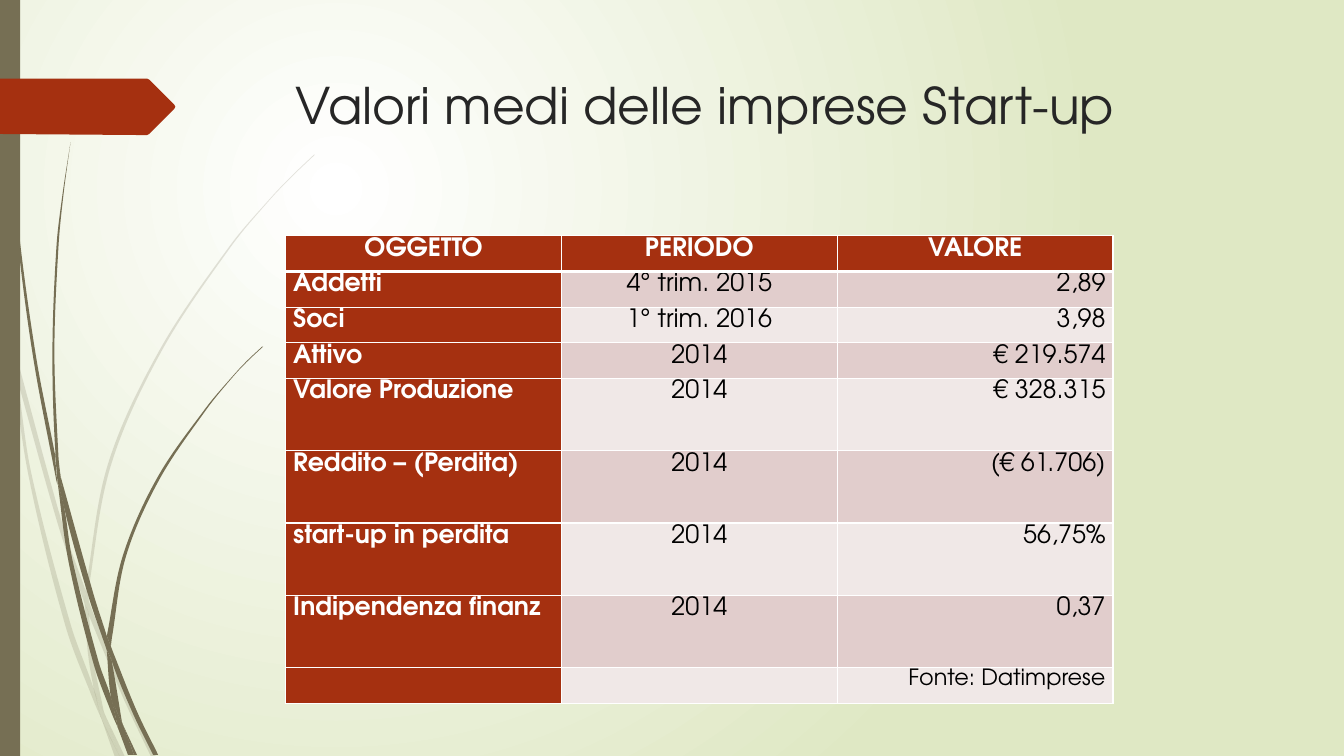
from math import dist

from lxml.etree import SubElement
from pptx import Presentation
from pptx.dml.color import RGBColor
from pptx.enum.shapes import MSO_SHAPE as Shape
from pptx.enum.text import MSO_ANCHOR as Anchor, MSO_AUTO_SIZE as AutoSize, PP_ALIGN as Align
from pptx.oxml.ns import qn
from pptx.util import Cm, Pt

FONT = "TeX Gyre Adventor"
WHITE = RGBColor(0xFF, 0xFF, 0xFF)
BLACK = RGBColor(0, 0, 0)
CHARCOAL = RGBColor(0x26, 0x26, 0x26)
RUST = RGBColor(0xA5, 0x30, 0x10)
OLIVE = RGBColor(0x76, 0x6F, 0x54)
PALE_GREEN = RGBColor(0xDF, 0xE8, 0xC4)
BANDS = (RGBColor(0xF0, 0xE8, 0xE7), RGBColor(0xE1, 0xCD, 0xCC))

TITLE = "Valori medi delle imprese Start-up"
LOW, TALL = 0.9, 1.82
ROWS = [
    (LOW, "OGGETTO", "PERIODO", "VALORE"),
    (LOW, "Addetti", "4° trim. 2015", "2,89"),
    (LOW, "Soci", "1° trim. 2016", "3,98"),
    (LOW, "Attivo", "2014", "€ 219.574"),
    (TALL, "Valore Produzione", "2014", "€ 328.315"),
    (TALL, "Reddito – (Perdita)", "2014", "(€ 61.706)"),
    (TALL, "start-up in perdita", "2014", "56,75%"),
    (TALL, "Indipendenza finanz", "2014", "0,37"),
    (LOW, "", "", "Fonte: Datimprese"),
]
COLUMN_ALIGN = (Align.LEFT, Align.CENTER, Align.RIGHT)
COLUMN_WIDTH = 6.95
CONTENT_LEFT = Cm(7.2)

# Outlines are lists of smooth edges that meet at corners, on a grid of GRID cm.
GRID = 0.0254
PALE_GRASS = [
    [[(11, 350), (9, 322), (0, 282)], [(0, 299), (10, 344), (11, 350)]],
    [[(17, 376), (58, 522), (84, 599)], [(85, 586), (62, 520), (14, 345)]],
    [[(88, 610), (123, 694), (150, 751)], [(155, 751), (127, 692), (92, 607), (88, 596)]],
    [[(119, 751), (124, 751)], [(105, 711)]],
    [[(11, 350), (28, 470), (65, 621), (92, 693), (101, 714)],
     [(99, 707), (93, 683), (70, 619), (31, 469), (17, 376), (11, 350)]],
    [[(84, 599), (87, 646), (93, 683), (96, 692), (105, 711)],
     [(103, 706), (91, 646), (88, 608), (84, 599)]],
    [[(88, 596), (88, 584), (110, 462), (160, 349), (229, 245), (268, 198), (290, 175), (312, 154)],
     [(312, 153), (289, 175), (268, 197), (228, 244), (158, 348), (107, 461), (85, 584), (85, 586)]],
    [[(101, 714), (114, 751)], [(119, 751)]],
    [[(84, 599), (88, 608)], [(88, 610), (88, 596)], [(85, 586)]],
    [[(93, 683), (99, 707), (101, 714), (119, 751)], [(105, 711), (96, 692), (93, 683)]],
]
DARK_GRASS = [
    [[(4, 0), (4, 48), (7, 110), (17, 233), (33, 355), (56, 477), (57, 481)],
     [(55, 457), (55, 453), (36, 355), (19, 232), (8, 109), (5, 48), (4, 0)], [(3, 0)]],
    [[(60, 472), (64, 505), (88, 592), (106, 645)], [(106, 633), (106, 631), (93, 590), (60, 472)]],
    [[(110, 641), (111, 656), (132, 708), (152, 749)], [(157, 749), (136, 706), (113, 649), (110, 641)]],
    [[(57, 477), (68, 557), (93, 659), (111, 708), (117, 722)],
     [(116, 717), (110, 691), (98, 657), (72, 556), (64, 505), (57, 477)]],
    [[(60, 472), (58, 453), (54, 349), (58, 245), (63, 193), (70, 141)],
     [(70, 141), (62, 193), (56, 245), (52, 349), (55, 449), (60, 472)]],
    [[(133, 749), (136, 749)], [(122, 719)]],
    [[(57, 477), (64, 505)], [(60, 472), (55, 449)], [(55, 453)]],
    [[(111, 633), (125, 552), (158, 476), (205, 406), (231, 374), (245, 359), (261, 344)],
     [(260, 344), (245, 358), (231, 373), (204, 405), (156, 474), (122, 551), (106, 631)], [(110, 641)]],
    [[(117, 722), (127, 749)], [(131, 749)]],
    [[(106, 645), (110, 691), (116, 706), (122, 719)], [(121, 716), (111, 656), (109, 651), (106, 645)]],
    [[(106, 645), (109, 651), (111, 656)], [(110, 641), (106, 631)]],
    [[(110, 691), (116, 717), (117, 722), (130, 749)], [(133, 749), (122, 719), (116, 706), (110, 691)]],
]
ARROW = [[(0, 78), (146, 78)], [(148, 79), (173, 104)], [(174, 106)],
         [(173, 108), (148, 133)], [(146, 134), (136, 134)], [(0, 133)]]


def handles(edge, i):
    """Return the two control points that bend the edge between points i and i + 1."""
    start, end = edge[i], edge[i + 1]
    before, after = edge[max(i - 1, 0)], edge[min(i + 2, len(edge) - 1)]
    length = dist(start, end)
    lead = length / (dist(before, start) + length) / 3
    trail = length / (length + dist(end, after)) / 3
    return (tuple(s + (e - b) * lead for s, e, b in zip(start, end, before)),
            tuple(e - (a - s) * trail for s, e, a in zip(start, end, after)))


def bend(shape, edges):
    """Turn the straight segments inside each edge of three or more points into curves."""
    segments = shape.element.xpath(".//a:path/*")
    left, top = (min(axis) for axis in zip(*(point for edge in edges for point in edge)))
    position = 0
    for edge in edges:
        for i in range(len(edge) - 1 if len(edge) > 2 else 0):
            segment = segments[position + i + 1]
            segment.tag = qn("a:cubicBezTo")
            for k, (x, y) in enumerate(handles(edge, i)):
                handle = SubElement(segment, qn("a:pt"), x=str(round(x - left)), y=str(round(y - top)))
                segment.insert(k, handle)
        position += len(edge)


def paint(shape, color, opacity=100):
    shape.shadow.inherit = False
    shape.fill.solid()
    shape.fill.fore_color.rgb = color
    shape.line.fill.background()
    if opacity < 100:
        tint = shape.element.xpath("./p:spPr/a:solidFill/a:srgbClr")[0]
        SubElement(tint, qn("a:alpha"), val=str(opacity * 1000))


def draw_outline(shapes, grid_edges, color, opacity=100):
    edges = [[(Cm(x * GRID), Cm(y * GRID)) for x, y in edge] for edge in grid_edges]
    points = [point for edge in edges for point in edge]
    builder = shapes.build_freeform(*points[0])
    builder.add_line_segments(points[1:], close=False)
    outline = builder.convert_to_shape()
    bend(outline, edges)
    SubElement(outline.element.xpath(".//a:path")[0], qn("a:close"))
    paint(outline, color, opacity)


def write(paragraph, text, size, color, bold=False):
    run = paragraph.add_run()
    run.text = text
    run.font.name, run.font.size, run.font.bold = FONT, Pt(size), bold
    run.font.color.rgb = color


def add_borders(cell, **widths):
    tc_pr = cell._tc.get_or_add_tcPr()
    for side in "LRTB":
        line = SubElement(tc_pr, qn(f"a:ln{side}"), w=str(Pt(widths.get(side, 1))))
        SubElement(SubElement(line, qn("a:solidFill")), qn("a:srgbClr"), val=str(WHITE))


def set_background(slide):
    """Fill with a round gradient whose centre lies a quarter in from the top left."""
    fill = slide.background.fill
    fill.gradient()
    for stop, color in zip(fill.gradient_stops, (WHITE, PALE_GREEN)):
        stop.color.rgb = color
    gradient = slide.element.xpath(".//p:bg//a:gradFill")[0]
    gradient.remove(gradient.find(qn("a:lin")))
    circle = SubElement(gradient, qn("a:path"), path="circle")
    SubElement(circle, qn("a:fillToRect"), l="50000", t="50000", r="100000", b="100000")


def add_values(slide):
    frame = slide.shapes.add_table(
        len(ROWS), len(COLUMN_ALIGN), CONTENT_LEFT, Cm(5.94),
        Cm(COLUMN_WIDTH * len(COLUMN_ALIGN)), Cm(sum(row[0] for row in ROWS)))
    values = frame.table
    values.horz_banding = False
    for column in values.columns:
        column.width = Cm(COLUMN_WIDTH)
    for r, (height, *texts) in enumerate(ROWS):
        values.rows[r].height = Cm(height)
        for c, text in enumerate(texts):
            cell = values.cell(r, c)
            heading = r == 0 or c == 0
            add_borders(cell, B=3 if r == 0 else 1, T=3 if r == 1 else 1)
            cell.fill.solid()
            cell.fill.fore_color.rgb = RUST if heading else BANDS[r % 2]
            cell.margin_left = cell.margin_right = Cm(0.19)
            cell.margin_top = cell.margin_bottom = 0
            cell.vertical_anchor = Anchor.TOP
            paragraph = cell.text_frame.paragraphs[0]
            paragraph.alignment = Align.CENTER if r == 0 else COLUMN_ALIGN[c]
            paragraph.line_spacing = 1.07
            if text:
                size = 16 if r == len(ROWS) - 1 else 18
                write(paragraph, text, size, WHITE if heading else BLACK, heading)


def main():
    deck = Presentation()
    deck.slide_width, deck.slide_height = Cm(33.87), Cm(19.05)
    slide = deck.slides.add_slide(deck.slide_layouts[5])
    set_background(slide)

    for grass, opacity in ((PALE_GRASS, 20), (DARK_GRASS, 100)):
        tuft = slide.shapes.add_group_shape()
        for blade in grass:
            draw_outline(tuft.shapes, blade, OLIVE, opacity)
    side_bar = slide.shapes.add_shape(Shape.RECTANGLE, 0, 0, Cm(0.51), deck.slide_height)
    paint(side_bar, OLIVE)
    draw_outline(slide.shapes, ARROW, RUST)

    title = slide.shapes.title
    title.left, title.top, title.width, title.height = CONTENT_LEFT, Cm(1.73), Cm(24.77), Cm(3.56)
    title.text_frame.auto_size = AutoSize.NONE
    title.text_frame.vertical_anchor = Anchor.TOP
    heading = title.text_frame.paragraphs[0]
    heading.alignment = Align.LEFT
    write(heading, TITLE, 36, CHARCOAL)
    slide.shapes.element.append(title.element)  # in front of the grass

    add_values(slide)
    deck.save("out.pptx")


if __name__ == "__main__":
    main()
